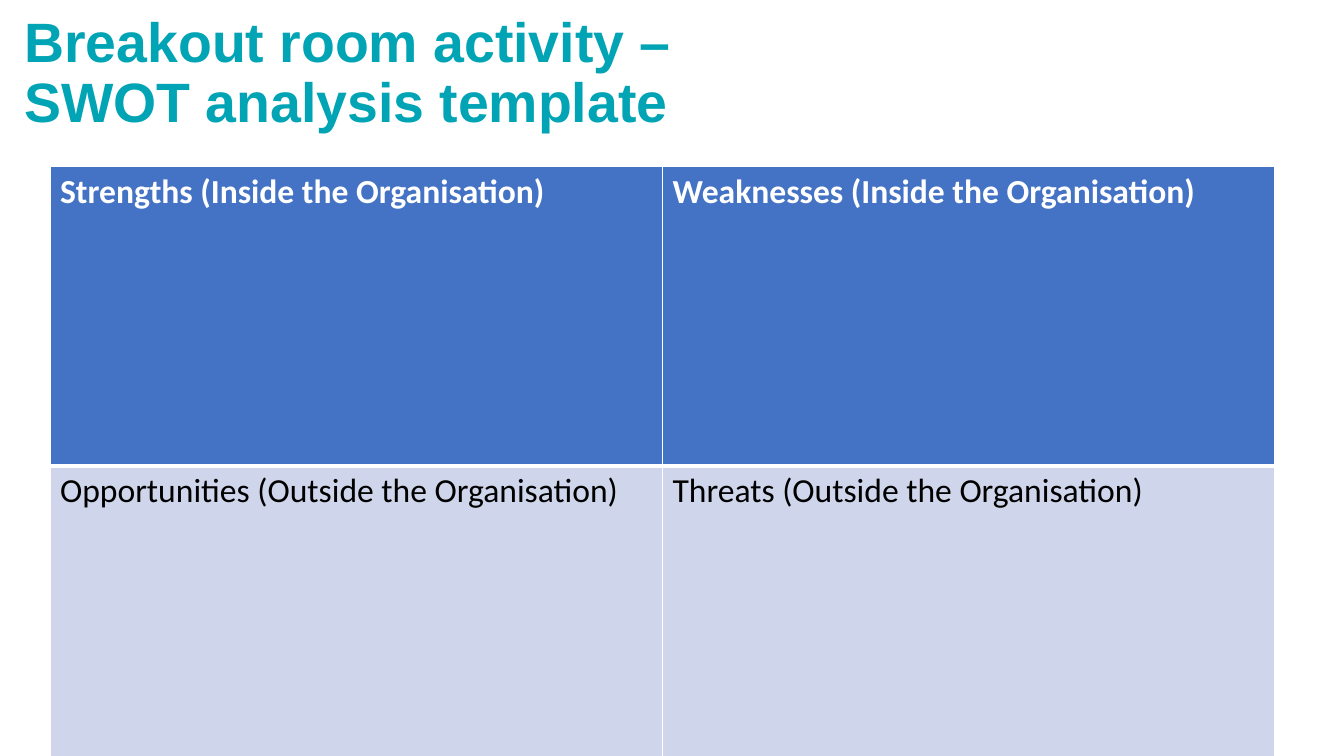
from dataclasses import dataclass
from lxml.etree import SubElement as Sub
from pptx import Presentation as Deck
from pptx.dml.color import RGBColor as Color
from pptx.enum.text import MSO_ANCHOR as Anchor
from pptx.oxml.ns import qn
from pptx.util import Cm, Pt


@dataclass(frozen=True)
class Theme:
    teal: str = "01A4B4"
    blue: str = "4472C4"
    pale: str = "CFD5EA"
    white: str = "FFFFFF"
    black: str = "000000"
    head: float = 39.6
    body: float = 24
    thin: float = 1
    thick: float = 3


look = Theme()
title = "Breakout room activity –\vSWOT analysis template"
swot = [
    ["Strengths (Inside the Organisation)", "Weaknesses (Inside the Organisation)"],
    ["Opportunities (Outside the Organisation)", "Threats (Outside the Organisation)"],
]


def style(item, form):
    for key, value in form.items():
        setattr(item, key, value)


def write(frame, text, color, form):
    para = frame.paragraphs[0]
    para.text = text
    style(para.font, form)
    para.font.color.rgb = Color.from_string(color)
    return para


def edge(cell, sides):
    props = cell._tc.get_or_add_tcPr()
    for side, width in sides.items():
        line = Sub(props, qn(f"a:ln{side}"), w=str(Pt(width)))
        fill = Sub(line, qn("a:solidFill"))
        Sub(fill, qn("a:srgbClr"), val=look.white)


def add_title(slide, box):
    frame = slide.shapes.add_textbox(*box).text_frame
    style(frame, {"word_wrap": True, "vertical_anchor": Anchor.MIDDLE})
    form = {"name": "Arial", "size": Pt(look.head), "bold": True}
    para = write(frame, title, look.teal, form)
    para.line_spacing = 0.9


def add_swot(slide, box):
    grid = slide.shapes.add_table(len(swot), len(swot[0]), *box).table
    rows = [
        (Cm(7.54), look.blue, look.white, True, look.thin, look.thick),
        (Cm(7.44), look.pale, look.black, False, look.thick, look.thin),
    ]
    for r, (tall, fill, ink, bold, top, base) in enumerate(rows):
        grid.rows[r].height = tall
        form = {"name": "Calibri", "size": Pt(look.body), "bold": bold}
        for c, text in enumerate(swot[r]):
            cell = grid.cell(r, c)
            edge(cell, {"L": look.thin, "R": look.thin, "T": top, "B": base})
            cell.fill.solid()
            cell.fill.fore_color.rgb = Color.from_string(fill)
            write(cell.text_frame, text, ink, form)


def main():
    deck = Deck()
    style(deck, {"slide_width": Cm(33.87), "slide_height": Cm(19.05)})
    slide = deck.slides.add_slide(deck.slide_layouts[6])
    add_title(slide, (Cm(0.36), Cm(0.36), Cm(31.19), Cm(3.02)))
    add_swot(slide, (Cm(1.26), Cm(4.2), Cm(30.87), Cm(14.98)))
    deck.save("out.pptx")


if __name__ == "__main__":
    main()
